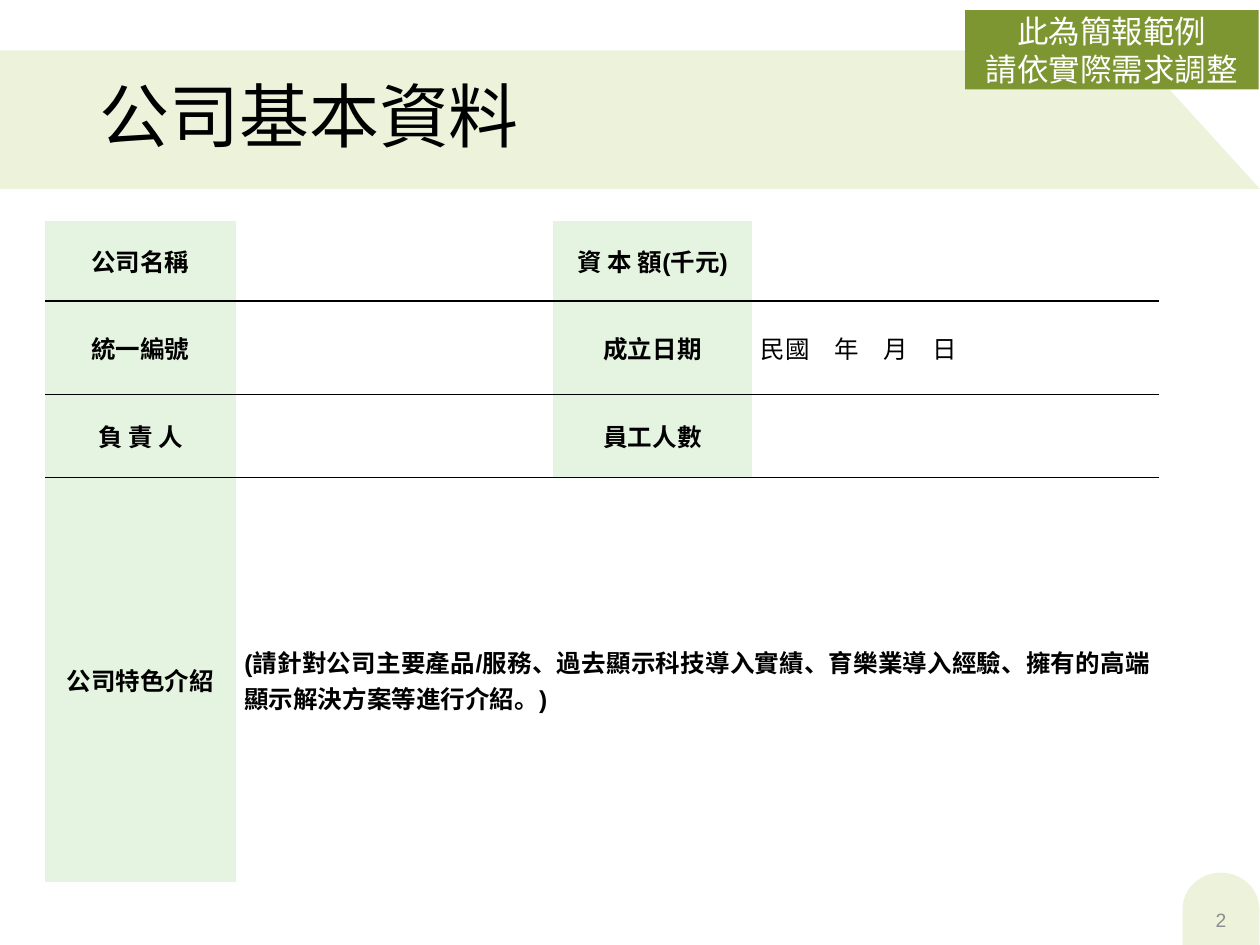
import pptx
import pptx.dml.color
import pptx.enum.shapes
import pptx.enum.text
import pptx.oxml
import pptx.oxml.ns
import pptx.util
from pptx.util import Inches

RGBColor = pptx.dml.color.RGBColor
ALIGN = pptx.enum.text.PP_ALIGN
MIDDLE = pptx.enum.text.MSO_ANCHOR.MIDDLE
SHAPES = pptx.enum.shapes.MSO_SHAPE

BLACK = RGBColor(0x00, 0x00, 0x00)
WHITE = RGBColor(0xFF, 0xFF, 0xFF)
GRAY = RGBColor(0x8C, 0x8C, 0x8C)
PALE_GREEN = RGBColor(0xED, 0xF3, 0xDB)
LABEL_GREEN = RGBColor(0xE5, 0xF4, 0xE0)
OLIVE = RGBColor(0x7E, 0x96, 0x32)
CJK_FONT = "Noto Sans CJK SC"
PLAIN_TABLE_STYLE = "{2D5ABB26-0587-4C30-8999-92F81FD0307C}"

COLUMN_WIDTHS = [1.51, 2.52, 1.58, 3.23]
ROW_HEIGHTS = [0.64, 0.74, 0.66, 3.21]
LABEL_COLUMNS = (0, 2)
COMPANY_ROWS = [
    ["公司名稱", "", "資 本 額(千元)", ""],
    ["統一編號", "", "成立日期", "民國　年　月　日"],
    ["負 責 人", "", "員工人數", ""],
    ["公司特色介紹",
     "(請針對公司主要產品/服務、過去顯示科技導入實績、育樂業導入經驗、"
     "擁有的高端顯示解決方案等進行介紹。)", "", ""],
]
HANGING_CELLS = {(0, 2), (1, 3), (2, 2)}


def write_text(frame, text, size, color=BLACK, font="Arial", east_asian=None,
               bold=False, align=ALIGN.LEFT, spacing=None, gap=0, hanging=0):
    """Fill a text frame, one paragraph for each line of text."""
    frame.word_wrap = True
    for index, line in enumerate(text.split("\n")):
        para = frame.add_paragraph() if index else frame.paragraphs[0]
        para.alignment = align
        para.line_spacing = spacing
        para.space_before = para.space_after = pptx.util.Pt(gap)
        if hanging:
            properties = para._p.get_or_add_pPr()
            properties.set("marL", str(Inches(hanging)))
            properties.set("indent", str(-Inches(hanging)))
        span = para.add_run()
        span.text = line
        span.font.size = pptx.util.Pt(size)
        span.font.name = font
        span.font.bold = bold
        span.font.color.rgb = color
        if east_asian:
            face = pptx.oxml.parse_xml(
                f'<a:ea {pptx.oxml.ns.nsdecls("a")} typeface="{east_asian}"/>')
            span.font._element.append(face)


def paint(shape, color):
    shape.shadow.inherit = False
    shape.fill.solid()
    shape.fill.fore_color.rgb = color
    shape.line.fill.background()


def add_block(page, kind, left, top, width, height, color):
    block = page.shapes.add_shape(
        kind, Inches(left), Inches(top), Inches(width), Inches(height))
    paint(block, color)
    return block


def add_title_band(page):
    builder = page.shapes.build_freeform(0, Inches(0.4))
    corners = [(9, 0.4), (10, 1.5), (0, 1.5)]
    builder.add_line_segments([(Inches(x), Inches(y)) for x, y in corners])
    paint(builder.convert_to_shape(), PALE_GREEN)


def add_text(page, left, top, width, height, text, **style):
    box = page.shapes.add_textbox(
        Inches(left), Inches(top), Inches(width), Inches(height))
    box.text_frame.vertical_anchor = MIDDLE
    write_text(box.text_frame, text, **style)


def add_rule(cell, side):
    """Draw a cell border; side is lnT or lnB."""
    cell._tc.get_or_add_tcPr().append(pptx.oxml.parse_xml(
        f'<a:{side} {pptx.oxml.ns.nsdecls("a")} w="{pptx.util.Pt(1)}">'
        f'<a:solidFill><a:srgbClr val="{BLACK}"/></a:solidFill></a:{side}>'))


def format_cell(cell, row, column, text):
    if row > 0:
        add_rule(cell, "lnT")
    if row < len(COMPANY_ROWS) - 1:
        add_rule(cell, "lnB")
    is_label = column in LABEL_COLUMNS and not cell.is_spanned
    if is_label:
        cell.fill.solid()
        cell.fill.fore_color.rgb = LABEL_GREEN
    else:
        cell.fill.background()
    cell.vertical_anchor = MIDDLE
    cell.margin_left = cell.margin_right = Inches(0.07)
    cell.margin_top = cell.margin_bottom = 0
    if text:
        write_text(cell.text_frame, text, 14, gap=2.4,
                   bold=is_label or cell.is_merge_origin,
                   align=ALIGN.CENTER if is_label else ALIGN.JUSTIFY,
                   hanging=0.33 if (row, column) in HANGING_CELLS else 0)


def add_company_table(page):
    table = page.shapes.add_table(
        len(ROW_HEIGHTS), len(COLUMN_WIDTHS), Inches(0.36), Inches(1.75),
        Inches(sum(COLUMN_WIDTHS)), Inches(sum(ROW_HEIGHTS))).table
    table.first_row = table.horz_banding = False
    table._tbl.tblPr.find(pptx.oxml.ns.qn("a:tableStyleId")).text = PLAIN_TABLE_STYLE
    for column, width in zip(table.columns, COLUMN_WIDTHS):
        column.width = Inches(width)
    for row, height in zip(table.rows, ROW_HEIGHTS):
        row.height = Inches(height)
    table.cell(3, 1).merge(table.cell(3, 3))
    for row, texts in enumerate(COMPANY_ROWS):
        for column, text in enumerate(texts):
            format_cell(table.cell(row, column), row, column, text)


def main():
    deck = pptx.Presentation()
    deck.slide_width, deck.slide_height = Inches(10), Inches(7.5)
    page = deck.slides.add_slide(deck.slide_layouts[6])

    add_title_band(page)
    number_tab = add_block(page, SHAPES.FLOWCHART_DELAY, 9.4, 6.91, 0.58, 0.61, PALE_GREEN)
    number_tab.rotation = 270
    add_text(page, 0.69, 0.4, 8.62, 1.1, "公司基本資料", size=40,
             font=CJK_FONT, east_asian=CJK_FONT, spacing=0.9)
    add_text(page, 9.42, 7.1, 0.54, 0.4, "2", size=11, color=GRAY, align=ALIGN.CENTER)
    add_company_table(page)

    notice = add_block(page, SHAPES.RECTANGLE, 7.66, 0.08, 2.33, 0.63, OLIVE)
    notice.text_frame.vertical_anchor = MIDDLE
    write_text(notice.text_frame, "此為簡報範例\n請依實際需求調整", 18,
               color=WHITE, align=ALIGN.CENTER)
    deck.save("out.pptx")


if __name__ == "__main__":
    main()
